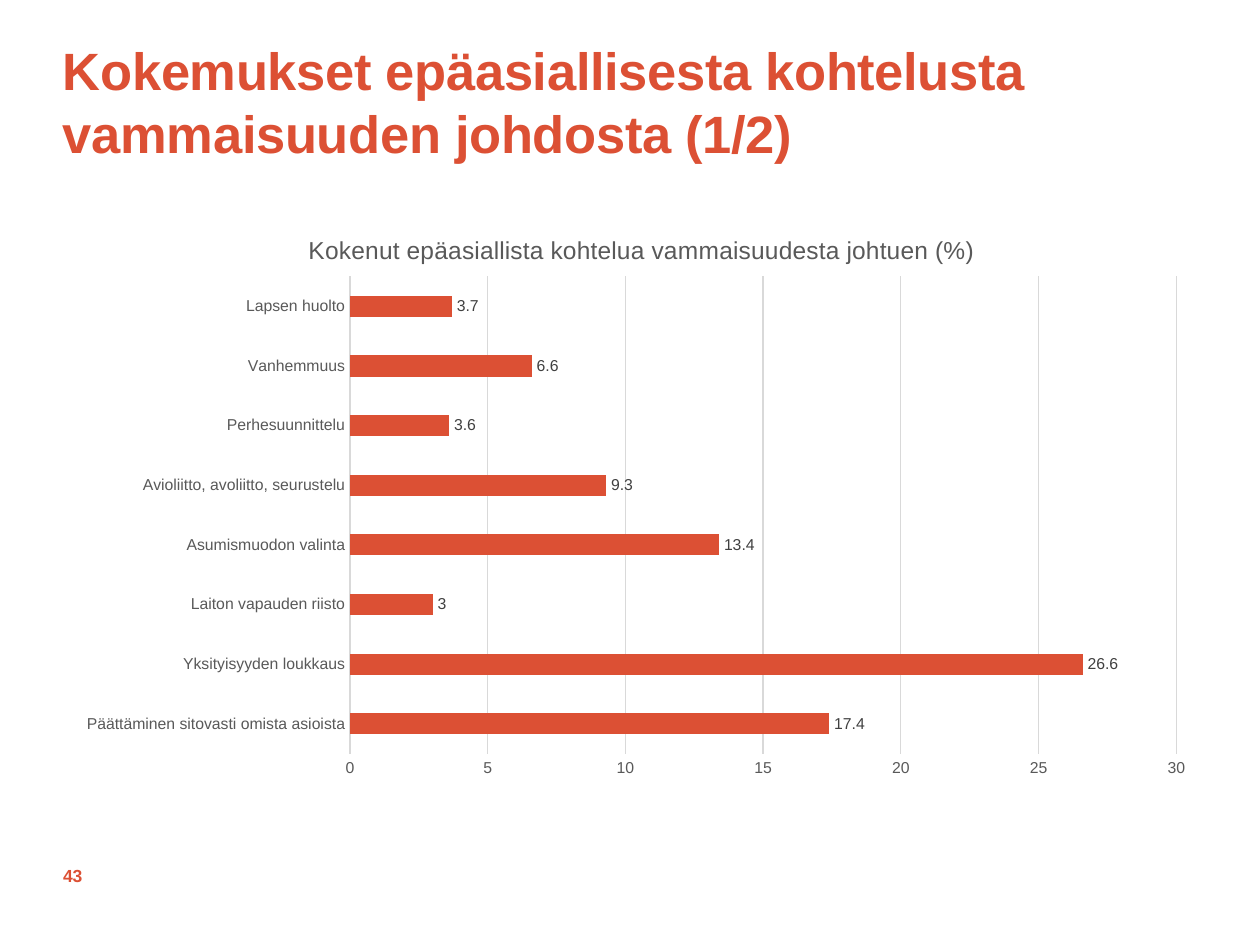
from pptx import Presentation, util as u
from pptx.chart.data import CategoryChartData
from pptx.dml.color import RGBColor
from pptx.enum import chart as ch, text
from pptx.oxml import parse_xml
from pptx.oxml.ns import nsdecls, qn

RED, GREY, DARK, RULE = "DC5034", "595959", "404040", "D9D9D9"


def tint(code):
    return RGBColor.from_string(code)


def place(part, inner=False, **spots):
    for old in part.findall(qn("c:layout")):
        part.remove(old)
    marks = '<c:layoutTarget val="inner"/>' if inner else ""
    marks += "".join(f'<c:{key}Mode val="edge"/>' for key in "xy")
    marks += "".join(f'<c:{key} val="{val}"/>' for key, val in spots.items())
    layout = parse_xml(f'<c:layout {nsdecls("c")}><c:manualLayout>{marks}'
                       '</c:manualLayout></c:layout>')
    part.insert(0 if inner else 1, layout)


class Deck:
    face = "Arial"

    def __init__(self, wide, high):
        self.show = Presentation()
        self.show.slide_width = u.Inches(wide)
        self.show.slide_height = u.Inches(high)
        self.page = self.show.slides.add_slide(self.show.slide_layouts[6])

    def style(self, font, size, color, bold=False):
        font.name, font.size, font.bold = self.face, u.Pt(size), bold
        font.color.rgb = tint(color)

    def text(self, box, words, size, anchor, pitch=None, track=None):
        frame = self.page.shapes.add_textbox(*map(u.Inches, box)).text_frame
        frame.word_wrap = True
        frame.vertical_anchor = anchor
        frame.margin_left = frame.margin_right = 0
        frame.margin_top = frame.margin_bottom = 0
        para = frame.paragraphs[0]
        run = para.add_run()
        run.text = words
        if track:
            run.font._element.set("spc", str(track))
        if pitch:
            para.line_spacing = u.Pt(pitch)
        self.style(para.font, size, RED, True)

    def bars(self, box, title, rows, top, step):
        data = CategoryChartData()
        data.categories = [name for name, _ in rows]
        data.add_series("Series 1", [val for _, val in rows])
        chart = self.page.shapes.add_chart(
            ch.XL_CHART_TYPE.BAR_CLUSTERED, *map(u.Inches, box), data).chart
        self.style(chart.font, 10, "000000")
        chart.has_legend = False
        head = chart.chart_title
        para = head.text_frame.paragraphs[0]
        para.text = title
        self.style(para.font, 14, GREY)
        place(head._element, x=0.21, y=0.04)

        plot = chart.plots[0]
        plot.gap_width, plot.vary_by_categories = 182, False
        place(plot._element.getparent(), True, x=0.25, y=0.12, w=0.72, h=0.82)
        fill = plot.series[0].format.fill
        fill.solid()
        fill.fore_color.rgb = tint(RED)
        plot.has_data_labels = True
        labels = plot.data_labels
        labels.show_value = True
        labels.position = ch.XL_LABEL_POSITION.OUTSIDE_END
        self.style(labels.font, 9, DARK)

        cat, val = chart.category_axis, chart.value_axis
        for axis in cat, val:
            axis.major_tick_mark = axis.minor_tick_mark = ch.XL_TICK_MARK.NONE
            self.style(axis.tick_labels.font, 9, GREY)
        val.minimum_scale, val.maximum_scale, val.major_unit = 0, top, step
        val.has_major_gridlines = True
        val.format.line.fill.background()
        for line in cat.format.line, val.major_gridlines.format.line:
            line.color.rgb = tint(RULE)
            line.width = u.Pt(0.75)


def main():
    deck = Deck(10, 7.5)
    deck.text((0.5, 0.3, 9, 1.16),
              "Kokemukset epäasiallisesta kohtelusta vammaisuuden johdosta (1/2)",
              30, text.MSO_ANCHOR.TOP, pitch=36, track=-20)
    deck.text((0.5, 6.75, 0.71, 0.4), "43", 10, text.MSO_ANCHOR.MIDDLE)
    rows = [
        ("Päättäminen sitovasti omista asioista", 17.4),
        ("Yksityisyyden loukkaus", 26.6),
        ("Laiton vapauden riisto", 3),
        ("Asumismuodon valinta", 13.4),
        ("Avioliitto, avoliitto, seurustelu", 9.3),
        ("Perhesuunnittelu", 3.6),
        ("Vanhemmuus", 6.6),
        ("Lapsen huolto", 3.7),
    ]
    deck.bars((0.5, 1.64, 9.11, 4.62),
              "Kokenut epäasiallista kohtelua vammaisuudesta johtuen (%)",
              rows, 30, 5)
    deck.show.save("out.pptx")


if __name__ == "__main__":
    main()
